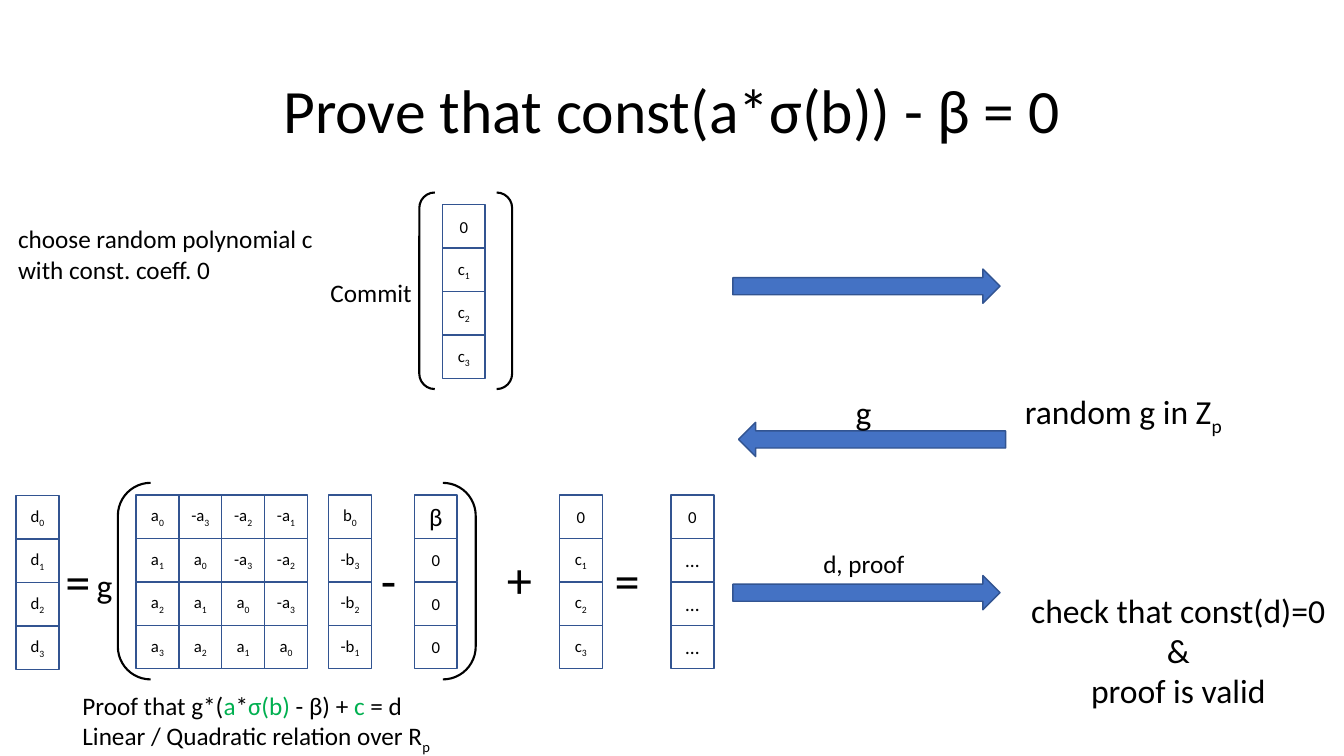
from dataclasses import dataclass

from pptx import Presentation
from pptx.dml.color import RGBColor
from pptx.enum import shapes, text
from pptx.util import Pt

FONT = "Calibri"
BLACK, WHITE, GREEN = "000000", "FFFFFF", "00B050"
BLUE, NAVY = "4472C4", "325491"
CELL_WIDTH, CELL_HEIGHT = 30.6, 31.05
VECTOR_TOP = 353.5
LEFT, CENTER = text.PP_ALIGN.LEFT, text.PP_ALIGN.CENTER
SHAPE = shapes.MSO_SHAPE


@dataclass
class Span:
    text: str
    color: str = BLACK


@dataclass
class Grid:
    left: float
    top: float
    rows: list[str]
    sizes: dict[str, float]


@dataclass
class Label:
    left: float
    top: float
    width: float
    height: float
    size: float
    lines: list[list[Span]]
    align: text.PP_ALIGN = LEFT


@dataclass
class Figure:
    kind: shapes.MSO_SHAPE
    left: float
    top: float
    width: float
    height: float
    fill: str | None
    line: str
    weight: float


MATRIX = ["a_0 -a_3 -a_2 -a_1", "a_1 a_0 -a_3 -a_2", "a_2 a_1 a_0 -a_3", "a_3 a_2 a_1 a_0"]
MASK = ["0", "c_1", "c_2", "c_3"]

GRIDS = [
    Grid(97.2, VECTOR_TOP, MATRIX, {}),
    Grid(234.7, VECTOR_TOP, ["b_0", "-b_3", "-b_2", "-b_1"], {}),
    Grid(479.3, VECTOR_TOP, ["0", "…", "…", "…"], {"…": 14}),
    Grid(316, 146.2, MASK, {}),
    Grid(11.5, VECTOR_TOP + 0.4, ["d_0", "d_1", "d_2", "d_3"], {}),
    Grid(296, VECTOR_TOP, ["β", "0", "0", "0"], {"β": 18}),
    Grid(399.6, VECTOR_TOP, MASK, {}),
]

FIGURES = [
    Figure(SHAPE.DOUBLE_BRACKET, 299.5, 137.5, 66.3, 140.4, None, BLACK, 1.5),
    Figure(SHAPE.DOUBLE_BRACKET, 84.2, 344.9, 255.6, 140.4, None, BLACK, 1.5),
    Figure(SHAPE.RIGHT_ARROW, 523.5, 192.2, 190.8, 24.5, BLUE, NAVY, 1),
    Figure(SHAPE.LEFT_ARROW, 527.5, 301.7, 190.8, 24.5, BLUE, NAVY, 1),
    Figure(SHAPE.RIGHT_ARROW, 523.5, 411.1, 190.8, 24.5, BLUE, NAVY, 1),
]

PROOF = [Span("Proof that g*("), Span("a", GREEN), Span("*"), Span("σ(b)", GREEN),
         Span(" - β) + "), Span("c", GREEN), Span(" = d")]

LABELS = [
    Label(39.6, 389.5, 42.5, 51, 36, [[Span("=")]]),
    Label(265, 388.8, 42.5, 51, 36, [[Span("-")]]),
    Label(355, 388.1, 42.5, 51, 36, [[Span("+")]]),
    Label(432, 388.8, 42.5, 51, 36, [[Span("=")]]),
    Label(61.9, 400.3, 30.2, 36, 24, [[Span("g")]]),
    Label(604.1, 276.5, 30.2, 36, 24, [[Span("g")]]),
    Label(229, 194.4, 76.3, 29, 18, [[Span("Commit")]]),
    Label(5.8, 156.2, 230.4, 72.7, 18,
          [[Span("choose random polynomial c")], [Span("with const. coeff. 0")]]),
    Label(725, 275.8, 174.2, 36, 24, [[Span("random g in Z_p")]]),
    Label(51.8, 489.6, 275, 51, 18, [PROOF, [Span("Linear / Quadratic relation over R_p")]]),
    Label(529.9, 388.1, 174.2, 29, 18, [[Span("d, proof")]], CENTER),
    Label(727.9, 417.6, 227.5, 94.3, 24,
          [[Span("check that const(d)=0")], [Span("&")], [Span("proof is valid")]], CENTER),
]


def rgb(color: str) -> RGBColor:
    return RGBColor.from_string(color)


def write_lines(frame, lines: list[list[Span]], size: float, align: text.PP_ALIGN) -> None:
    for index, line in enumerate(lines):
        para = frame.add_paragraph() if index else frame.paragraphs[0]
        para.alignment = align
        para.font.name = FONT
        para.font.size = Pt(size)
        for part in line:
            base, _, subscript = part.text.partition("_")
            for wording, offset in ((base, None), (subscript, "-25000")):
                if not wording:
                    continue
                span = para.add_run()
                span.text = wording
                span.font.color.rgb = rgb(part.color)
                if offset:
                    span._r.get_or_add_rPr().set("baseline", offset)


def draw_figure(page, figure: Figure):
    shape = page.shapes.add_shape(figure.kind, Pt(figure.left), Pt(figure.top),
                                  Pt(figure.width), Pt(figure.height))
    shape.shadow.inherit = False
    if figure.fill:
        shape.fill.solid()
        shape.fill.fore_color.rgb = rgb(figure.fill)
    else:
        shape.fill.background()
    shape.line.color.rgb = rgb(figure.line)
    shape.line.width = Pt(figure.weight)
    return shape


def draw_grid(page, grid: Grid) -> None:
    for row, entries in enumerate(grid.rows):
        for column, entry in enumerate(entries.split()):
            cell = draw_figure(page, Figure(
                SHAPE.RECTANGLE, grid.left + column * CELL_WIDTH, grid.top + row * CELL_HEIGHT,
                CELL_WIDTH, CELL_HEIGHT, WHITE, NAVY, 1))
            frame = cell.text_frame
            frame.margin_left = frame.margin_right = 0
            frame.vertical_anchor = text.MSO_ANCHOR.MIDDLE
            write_lines(frame, [[Span(entry)]], grid.sizes.get(entry, 12), CENTER)


def draw_label(page, label: Label) -> None:
    box = page.shapes.add_textbox(Pt(label.left), Pt(label.top), Pt(label.width), Pt(label.height))
    box.text_frame.word_wrap = True
    box.text_frame.auto_size = text.MSO_AUTO_SIZE.SHAPE_TO_FIT_TEXT
    write_lines(box.text_frame, label.lines, label.size, label.align)


def write_title(page, wording: str) -> None:
    title = page.shapes.title
    title.left, title.top, title.width, title.height = Pt(66), Pt(28.8), Pt(828), Pt(104.4)
    title.text_frame.vertical_anchor = text.MSO_ANCHOR.MIDDLE
    write_lines(title.text_frame, [[Span(wording)]], 44, CENTER)
    title.text_frame.paragraphs[0].line_spacing = 0.9


def main() -> None:
    deck = Presentation()
    deck.slide_width, deck.slide_height = Pt(960), Pt(540)
    page = deck.slides.add_slide(deck.slide_layouts[5])
    write_title(page, "Prove that const(a*σ(b)) - β = 0")
    for grid in GRIDS:
        draw_grid(page, grid)
    for figure in FIGURES:
        draw_figure(page, figure)
    for label in LABELS:
        draw_label(page, label)
    deck.save("out.pptx")


if __name__ == "__main__":
    main()
